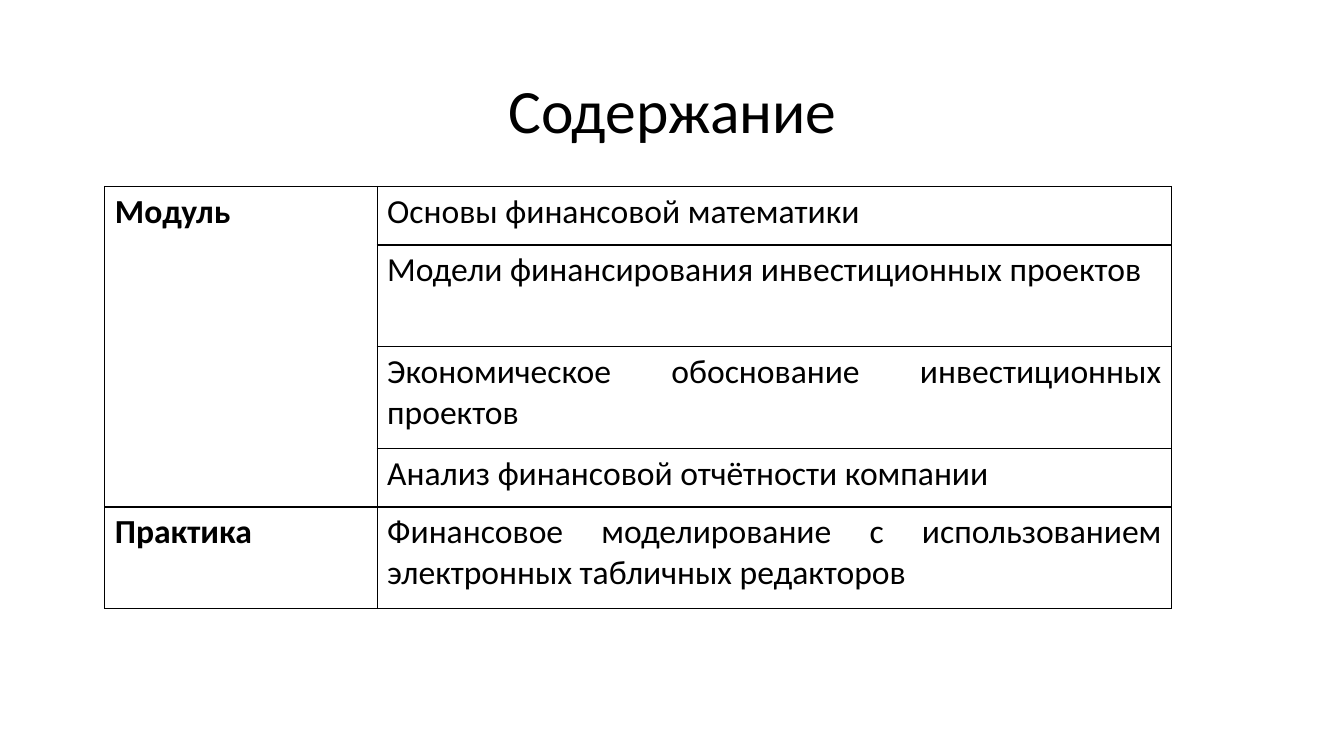
from dataclasses import dataclass

from lxml.etree import SubElement
from pptx import Presentation
from pptx.dml.color import RGBColor
from pptx.enum.text import MSO_ANCHOR as Anchor, PP_ALIGN as Align
from pptx.oxml.ns import qn
from pptx.table import Table, _Cell as Cell
from pptx.util import Inches, Pt

BLACK = "000000"


@dataclass
class Section:
    name: str
    topics: list[str]


SECTIONS = [
    Section("Модуль", [
        "Основы финансовой математики",
        "Модели финансирования инвестиционных проектов",
        "Экономическое обоснование инвестиционных проектов",
        "Анализ финансовой отчётности компании",
    ]),
    Section("Практика", [
        "Финансовое моделирование с использованием электронных табличных редакторов",
    ]),
]
COLUMN_WIDTHS = [2.7, 7.88]
ROW_HEIGHTS = [0.58, 1.01, 1.01, 0.58, 1.01]


def color(value: str) -> RGBColor:
    return RGBColor.from_string(value)


def write(frame, text: str, size: float, align: Align, bold: bool = False) -> None:
    paragraph = frame.paragraphs[0]
    paragraph.text = text
    paragraph.alignment = align
    font = paragraph.runs[0].font
    for name, value in {"name": "Calibri", "size": Pt(size), "bold": bold}.items():
        setattr(font, name, value)
    font.color.rgb = color(BLACK)


def format_cell(cell: Cell) -> None:
    properties = cell._tc.get_or_add_tcPr()
    for side in ("a:lnL", "a:lnR", "a:lnT", "a:lnB"):
        line = SubElement(properties, qn(side), w=str(Pt(1)))
        fill = SubElement(line, qn("a:solidFill"))
        SubElement(fill, qn("a:srgbClr"), val=BLACK)
    cell.fill.background()


def fill_table(table: Table) -> None:
    for column, width in zip(table.columns, COLUMN_WIDTHS):
        column.width = Inches(width)
    for row, height in zip(table.rows, ROW_HEIGHTS):
        row.height = Inches(height)
    for cell in table.iter_cells():
        format_cell(cell)
    first = 0
    for section in SECTIONS:
        last = first + len(section.topics) - 1
        heading = table.cell(first, 0)
        if last > first:
            heading.merge(table.cell(last, 0))
        write(heading.text_frame, section.name, 24, Align.LEFT, bold=True)
        for row, topic in enumerate(section.topics, first):
            write(table.cell(row, 1).text_frame, topic, 24, Align.JUSTIFY)
        first = last + 1


def main() -> None:
    presentation = Presentation()
    presentation.slide_width = Inches(13.33)
    presentation.slide_height = Inches(7.5)
    slide = presentation.slides.add_slide(presentation.slide_layouts[5])

    title = slide.shapes.title
    box = {"left": 0.92, "top": 0.4, "width": 11.5, "height": 1.45}
    for name, value in box.items():
        setattr(title, name, Inches(value))
    title.text_frame.vertical_anchor = Anchor.MIDDLE
    write(title.text_frame, "Содержание", 44, Align.CENTER)
    title.text_frame.paragraphs[0].line_spacing = 0.9

    frame = slide.shapes.add_table(
        len(ROW_HEIGHTS), len(COLUMN_WIDTHS), Inches(1.04), Inches(1.85),
        Inches(sum(COLUMN_WIDTHS)), Inches(sum(ROW_HEIGHTS)),
    )
    for name in ("first_row", "horz_banding"):
        setattr(frame.table, name, False)
    fill_table(frame.table)
    presentation.save("out.pptx")


if __name__ == "__main__":
    main()
